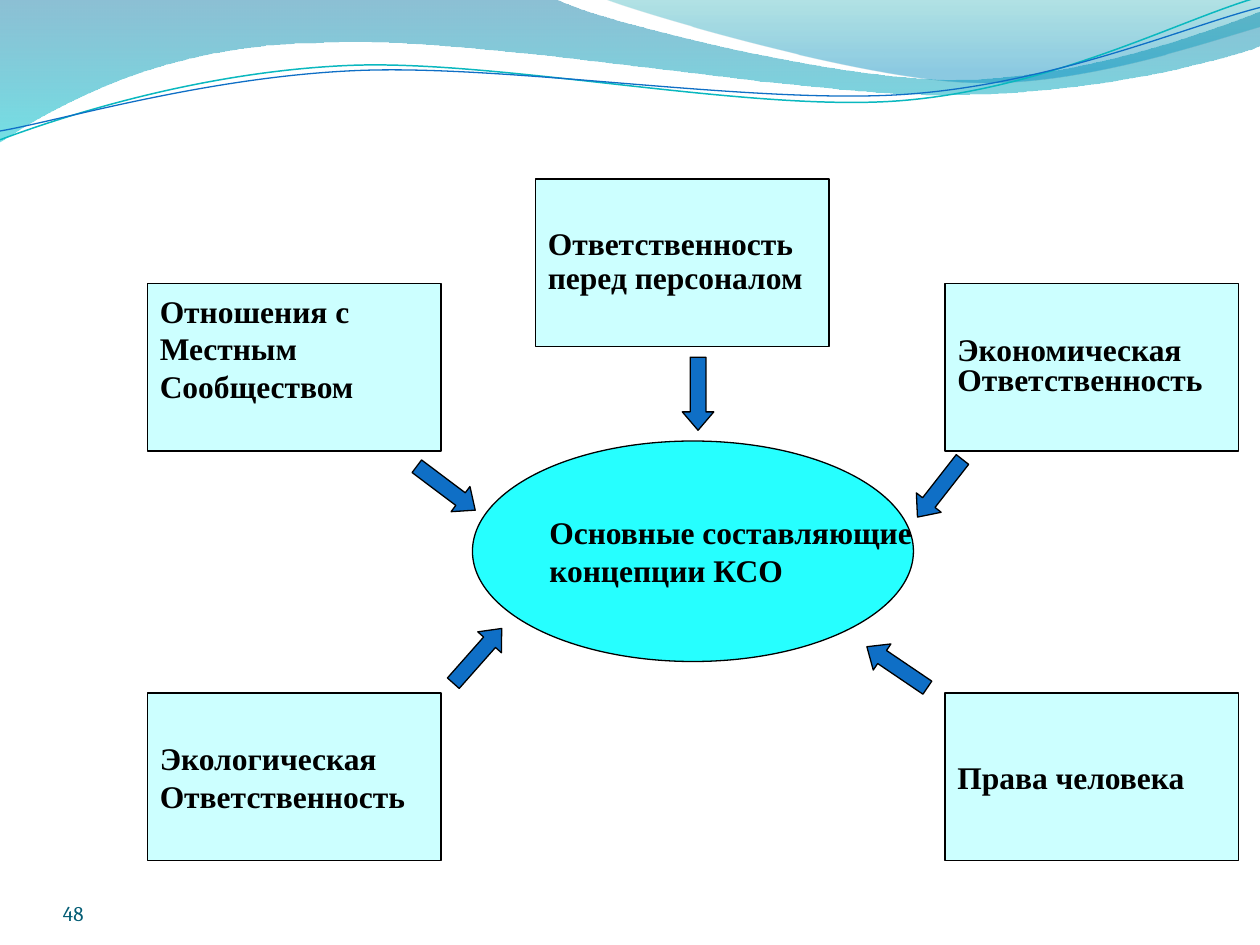
import math

import pptx
import pptx.dml.color
import pptx.enum.shapes
import pptx.enum.text
import pptx.oxml
import pptx.oxml.ns
import pptx.util

Inches, Pt = pptx.util.Inches, pptx.util.Pt
RGBColor = pptx.dml.color.RGBColor
MSO_SHAPE = pptx.enum.shapes.MSO_SHAPE
MSO_ANCHOR = pptx.enum.text.MSO_ANCHOR
PP_ALIGN = pptx.enum.text.PP_ALIGN
qn, nsdecls = pptx.oxml.ns.qn, pptx.oxml.ns.nsdecls

BLACK = RGBColor(0x00, 0x00, 0x00)
PALE_CYAN = RGBColor(0xCC, 0xFF, 0xFF)
CYAN = RGBColor(0x00, 0xFF, 0xFF)
BLUE = RGBColor(0x0F, 0x6F, 0xC6)
TEAL = RGBColor(0x0A, 0xB8, 0xBF)
DARK_TEAL = RGBColor(0x04, 0x5D, 0x75)
WAVE_BLUE = RGBColor(0x00, 0x74, 0xA1)
WAVE_AQUA = RGBColor(0x00, 0xC6, 0xCF)
CREST_GREEN = RGBColor(0x00, 0xA1, 0xA9)
CREST_BLUE = RGBColor(0x00, 0x8B, 0xBF)

BOX_SIZE = (2.33, 1.33)
ARROW_SIZE = (0.58, 0.25)
UNITS_PER_INCH = 1000
CURVE_TILT = -2.7

# Left, top, lines, line spacing, bottom inset
BOXES = [
    (1.17, 2.25, ["Отношения с", "Местным", "Сообществом"], None, 0.35),
    (1.17, 5.5, ["Экологическая", "Ответственность"], None, 0.05),
    (7.5, 2.25, ["Экономическая", "Ответственность"], 0.8, 0.05),
    (7.5, 5.5, ["Права человека"], None, 0.05),
    (4.25, 1.42, ["Ответственность", "перед персоналом"], 0.9, 0.05),
]
# Left, top, rotation
ARROWS = [
    (6.83, 5.17, 214.1),
    (3.5, 5.08, 311.5),
    (3.25, 3.75, 36.9),
    (7.17, 3.75, 128),
    (5.25, 3, 90),
]
# Each outline is a start point followed by line ends (2 numbers) or Bezier segments (6)
WAVE = [(0, -0.01), (4.4, -0.01), (4.76, 0.17, 6.64, 0.63, 7.58, 0.63),
        (8.53, 0.63, 9.58, 0.26, 10, 0.09), (10.01, 0.36),
        (9.83, 0.44, 8.7, 0.76, 7.46, 0.75), (6.22, 0.75, 3.82, 0.28, 2.57, 0.34),
        (1.29, 0.35, 0.46, 0.83, -0.01, 1.13)]
CREST = [(4.79, -0.01), (5.09, 0.11, 6.82, 0.62, 7.69, 0.65),
         (8.56, 0.69, 9.61, 0.32, 10, 0.21), (10, 0)]
TEAL_CURVE = [(0, 1.11), (0.48, 0.93, 1.58, 0.57, 2.77, 0.52),
              (3.95, 0.47, 5.93, 0.89, 7.13, 0.8), (8.33, 0.71, 9.38, 0.15, 9.98, -0.02)]
BLUE_CURVE = [(0, 1.04), (0.47, 0.96, 1.64, 0.61, 2.83, 0.56),
              (4.03, 0.51, 5.97, 0.83, 7.17, 0.75), (8.36, 0.67, 9.41, 0.21, 10, 0.06)]


def turn(segment, degrees, center):
    """Rotate the points of one segment clockwise about a center."""
    cos, sin = math.cos(math.radians(degrees)), math.sin(math.radians(degrees))
    turned = []
    for x, y in zip(segment[::2], segment[1::2]):
        dx, dy = x - center[0], y - center[1]
        turned += [center[0] + dx * cos - dy * sin, center[1] + dx * sin + dy * cos]
    return turned


def add_outline(slide, outline, close):
    """Build a freeform, then join each three control points into a Bezier curve."""
    points = [(round(x * UNITS_PER_INCH), round(y * UNITS_PER_INCH))
              for segment in outline for x, y in zip(segment[::2], segment[1::2])]
    builder = slide.shapes.build_freeform(*points[0], scale=Inches(1) / UNITS_PER_INCH)
    builder.add_line_segments(points[1:], close=close)
    shape = builder.convert_to_shape()
    shape.shadow.inherit = False
    steps = iter(shape._element.findall(".//" + qn("a:lnTo")))
    for segment in outline[1:]:
        first = next(steps)
        if len(segment) == 6:
            bezier = pptx.oxml.parse_xml(f'<a:cubicBezTo {nsdecls("a")}/>')
            first.addprevious(bezier)
            for step in (first, next(steps), next(steps)):
                bezier.append(step[0])
                step.getparent().remove(step)
    return shape


def set_opacity(shape, percents):
    """Give each fill colour of the shape its opacity, in order."""
    colors = shape.fill._xPr.findall(".//" + qn("a:srgbClr"))
    for color, percent in zip(colors, percents):
        color.append(pptx.oxml.parse_xml(f'<a:alpha {nsdecls("a")} val="{percent * 1000}"/>'))


def add_wave(slide, outline, colors, opacities, last_stop):
    wave = add_outline(slide, outline, close=True)
    wave.fill.gradient()
    wave.fill.gradient_angle = 270
    for stop, color, position in zip(wave.fill.gradient_stops, colors, (0, last_stop)):
        stop.color.rgb = color
        stop.position = position
    set_opacity(wave, opacities)
    wave.line.fill.background()


def add_curve(slide, outline, center, color, width):
    level = [turn(segment, -CURVE_TILT, center) for segment in outline]
    curve = add_outline(slide, level, close=False)
    curve.rotation = CURVE_TILT
    curve.fill.background()
    curve.line.color.rgb = color
    curve.line.width = Pt(width)


def add_figure(slide, kind, left, top, size, color):
    figure = slide.shapes.add_shape(kind, Inches(left), Inches(top), *map(Inches, size))
    figure.shadow.inherit = False
    figure.fill.solid()
    figure.fill.fore_color.rgb = color
    figure.line.color.rgb = BLACK
    figure.line.width = Pt(0.75)
    return figure


def write_lines(figure, lines, spacing=None, bottom=0.05):
    frame = figure.text_frame
    frame.word_wrap = False
    frame.vertical_anchor = MSO_ANCHOR.MIDDLE
    frame.margin_bottom = Inches(bottom)
    for index, line in enumerate(lines):
        paragraph = frame.add_paragraph() if index else frame.paragraphs[0]
        paragraph.text = line
        paragraph.alignment = PP_ALIGN.LEFT
        paragraph.line_spacing = spacing
        paragraph.font.name = "Times New Roman"
        paragraph.font.size = Pt(18)
        paragraph.font.bold = True
        paragraph.font.color.rgb = BLACK


def add_arrow(slide, left, top, rotation):
    arrow = add_figure(slide, MSO_SHAPE.RIGHT_ARROW, left, top, ARROW_SIZE, BLUE)
    arrow.adjustments[1] = 0.583
    arrow.rotation = rotation


def add_page_number(slide, number):
    page = slide.shapes.add_textbox(Inches(0.5), Inches(6.95), Inches(2.33), Inches(0.4))
    frame = page.text_frame
    frame.word_wrap = True
    frame.vertical_anchor = MSO_ANCHOR.BOTTOM
    frame.margin_left = frame.margin_right = frame.margin_top = frame.margin_bottom = 0
    paragraph = frame.paragraphs[0]
    paragraph.text = number
    paragraph.font.name = "Cambria"
    paragraph.font.size = Pt(12)
    paragraph.font.color.rgb = DARK_TEAL


def main():
    deck = pptx.Presentation()
    deck.slide_width, deck.slide_height = Inches(10), Inches(7.5)
    slide = deck.slides.add_slide(deck.slide_layouts[6])

    # Wave decoration along the top
    add_wave(slide, WAVE, (WAVE_BLUE, WAVE_AQUA), (45, 55), 1)
    add_wave(slide, CREST, (CREST_GREEN, CREST_BLUE), (30, 45), 0.8)
    add_curve(slide, TEAL_CURVE, (4.99, 0.58), TEAL, 0.85)
    add_curve(slide, BLUE_CURVE, (5, 0.59), BLUE, 0.75)

    add_page_number(slide, "48")

    # Central concept
    concept = add_figure(slide, MSO_SHAPE.FLOWCHART_CONNECTOR, 3.75, 3.5, (3.5, 1.75), CYAN)
    set_opacity(concept, [85])
    write_lines(concept, ["Основные составляющие", "концепции КСО"])

    # Components around it, with arrows pointing inwards
    for left, top, lines, spacing, bottom in BOXES:
        component = add_figure(slide, MSO_SHAPE.FLOWCHART_PROCESS, left, top, BOX_SIZE, PALE_CYAN)
        write_lines(component, lines, spacing, bottom)
    for left, top, rotation in ARROWS:
        add_arrow(slide, left, top, rotation)

    deck.save("out.pptx")


if __name__ == "__main__":
    main()
